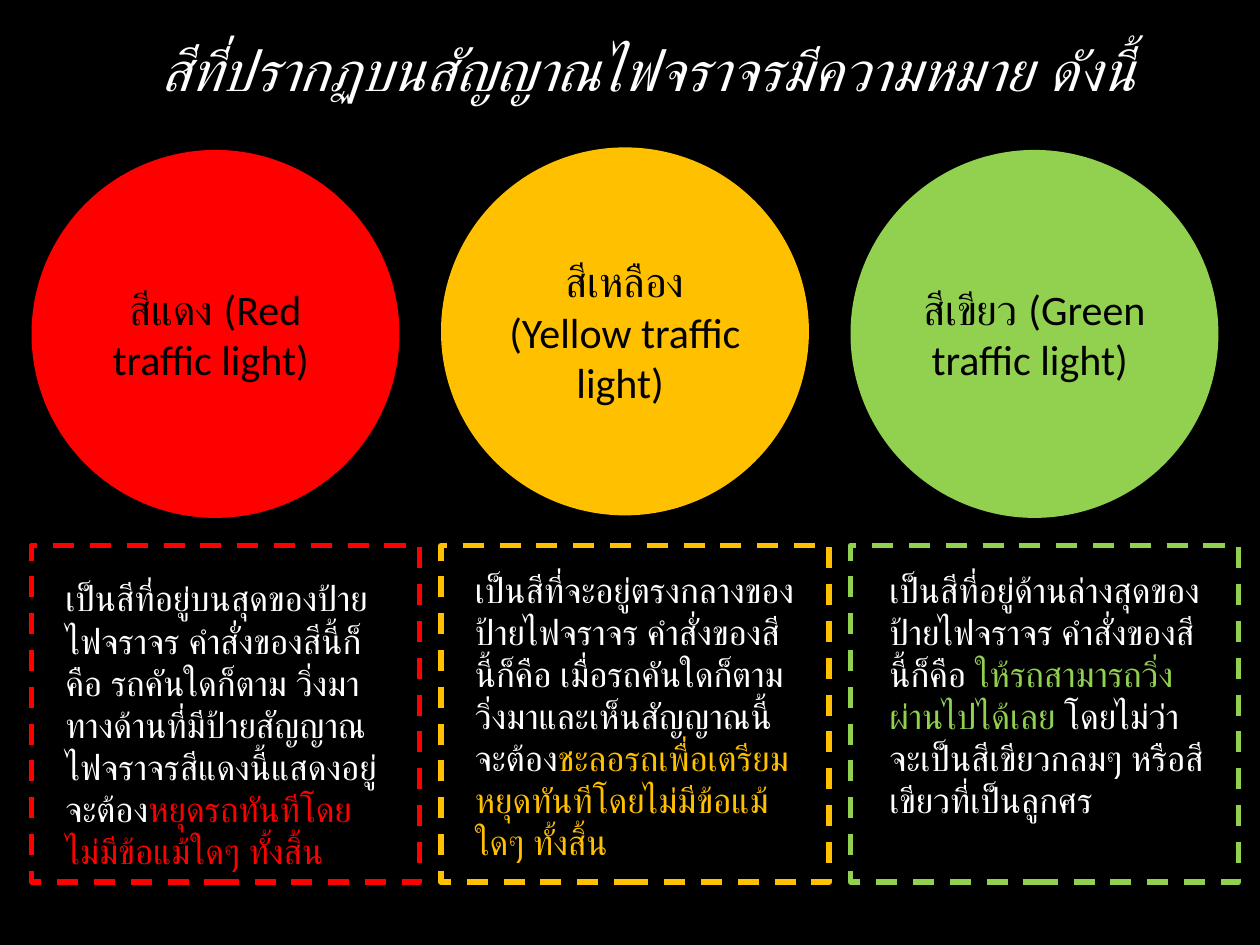
from dataclasses import dataclass

from pptx import Presentation
from pptx.dml.color import RGBColor
from pptx.enum.dml import MSO_LINE
from pptx.enum.shapes import MSO_SHAPE
from pptx.enum.text import MSO_ANCHOR, MSO_AUTO_SIZE, PP_ALIGN
from pptx.util import Inches, Pt

DASH = MSO_LINE.DASH
ELLIPSE, RECTANGLE = MSO_SHAPE.OVAL, MSO_SHAPE.RECTANGLE
TOP, MIDDLE = MSO_ANCHOR.TOP, MSO_ANCHOR.MIDDLE
NO_AUTOFIT = MSO_AUTO_SIZE.NONE
LEFT, CENTER = PP_ALIGN.LEFT, PP_ALIGN.CENTER
TITLE_ONLY = 5


@dataclass(frozen=True)
class Theme:
    """Colours, font and type sizes of the slide."""

    font: str = "Calibri"
    background: str = "000000"
    light: str = "FFFFFF"
    dark: str = "000000"
    red: str = "FF0000"
    yellow: str = "FFC000"
    green: str = "92D050"
    title_size: int = 32
    label_size: int = 24
    body_size: int = 20
    frame_width: int = 3


@dataclass(frozen=True)
class Box:
    """A rectangle in inches."""

    left: float
    top: float
    width: float
    height: float

    def inside(self, left, top, width, height):
        """Return a box placed relative to this one's corner."""
        return Box(self.left + left, self.top + top, width, height)

    def lengths(self):
        """Return the four lengths for python-pptx."""
        return [Inches(n) for n in (self.left, self.top, self.width, self.height)]


@dataclass(frozen=True)
class Light:
    """One traffic light: its colour, wording and small offsets."""

    color: str
    label: str
    spans: tuple
    circle_top: float
    text_left: float
    text_top: float
    text_width: float


THEME = Theme()
PAGE = Box(0, 0, 10, 7.5)
TITLE_BOX = PAGE.inside(0.8, 0.23, 8.68, 0.64)
FIRST_COLUMN = PAGE.inside(0.25, 1.17, 3.08, 5.83)
COLUMN_STEP = 3.25
CIRCLE_SIZE = 2.92
FRAME_TOP, FRAME_HEIGHT = 3.16, 2.67
TEXT_HEIGHT = 2.15

TITLE = "สีที่ปรากฏบนสัญญาณไฟจราจรมีความหมาย ดังนี้"
LIGHTS = (
    Light(
        THEME.red,
        "สีแดง (Red traffic light) ",
        (
            ("เป็นสีที่อยู่บนสุดของป้ายไฟจราจร คำสั่งของสีนี้ก็คือ รถคันใดก็ตาม "
             "วิ่งมาทางด้านที่มีป้ายสัญญาณไฟจราจรสีแดงนี้แสดงอยู่ จะต้อง", THEME.light),
            ("หยุดรถทันทีโดยไม่มีข้อแม้ใดๆ ทั้งสิ้น", THEME.red),
        ),
        0.02, 0.17, 0.2, 2.75,
    ),
    Light(
        THEME.yellow,
        "สีเหลือง (Yellow traffic light) ",
        (
            ("เป็นสีที่จะอยู่ตรงกลางของป้ายไฟจราจร คำสั่งของสีนี้ก็คือ "
             "เมื่อรถคันใดก็ตามวิ่งมาและเห็นสัญญาณนี้จะต้อง", THEME.light),
            ("ชะลอรถเพื่อเตรียมหยุดทันทีโดยไม่มีข้อแม้ใดๆ ทั้งสิ้น", THEME.yellow),
        ),
        0, 0.17, 0.13, 2.75,
    ),
    Light(
        THEME.green,
        "สีเขียว (Green traffic light) ",
        (
            ("เป็นสีที่อยู่ด้านล่างสุดของป้ายไฟจราจร คำสั่งของสีนี้ก็คือ ", THEME.light),
            ("ให้รถสามารถวิ่งผ่านไปได้เลย ", THEME.green),
            ("โดยไม่ว่าจะเป็นสีเขียวกลมๆ หรือสีเขียวที่เป็นลูกศร", THEME.light),
        ),
        0.02, 0.21, 0.13, 2.71,
    ),
)


def write_spans(frame, spans, size, align, anchor, italic=None):
    """Fill a text frame with one paragraph of coloured spans."""
    frame.word_wrap = True
    frame.auto_size = NO_AUTOFIT
    frame.vertical_anchor = anchor
    para = frame.paragraphs[0]
    para.alignment = align
    for text, color in spans:
        span = para.add_run()
        span.text = text
        span.font.name = THEME.font
        span.font.size = Pt(size)
        span.font.italic = italic
        span.font.color.rgb = RGBColor.from_string(color)


def place_title(page, box):
    """Move the title placeholder into its box and write the title."""
    title = page.shapes.title
    title.left, title.top, title.width, title.height = box.lengths()
    write_spans(title.text_frame, [(TITLE, THEME.light)],
                THEME.title_size, CENTER, TOP, italic=True)


def add_circle(page, box, light):
    """Draw the filled lamp with its name."""
    circle = page.shapes.add_shape(ELLIPSE, *box.lengths())
    circle.shadow.inherit = False
    circle.fill.solid()
    circle.fill.fore_color.rgb = RGBColor.from_string(light.color)
    circle.line.fill.background()
    write_spans(circle.text_frame, [(light.label, THEME.dark)],
                THEME.label_size, CENTER, MIDDLE)


def add_frame(page, box, color):
    """Draw the dashed frame around a description."""
    frame = page.shapes.add_shape(RECTANGLE, *box.lengths())
    frame.shadow.inherit = False
    frame.fill.background()
    frame.line.color.rgb = RGBColor.from_string(color)
    frame.line.width = Pt(THEME.frame_width)
    frame.line.dash_style = DASH


def add_light_column(page, box, light):
    """Place a lamp above its framed description."""
    add_circle(page, box.inside(0, light.circle_top, CIRCLE_SIZE, CIRCLE_SIZE), light)
    frame_box = box.inside(0, FRAME_TOP, box.width, FRAME_HEIGHT)
    text_box = frame_box.inside(light.text_left, light.text_top,
                                light.text_width, TEXT_HEIGHT)
    description = page.shapes.add_textbox(*text_box.lengths())
    write_spans(description.text_frame, light.spans, THEME.body_size, LEFT, TOP)
    add_frame(page, frame_box, light.color)


def main():
    """Build the traffic light slide and save it."""
    deck = Presentation()
    deck.slide_width, deck.slide_height = Inches(PAGE.width), Inches(PAGE.height)
    page = deck.slides.add_slide(deck.slide_layouts[TITLE_ONLY])
    page.background.fill.solid()
    page.background.fill.fore_color.rgb = RGBColor.from_string(THEME.background)
    place_title(page, TITLE_BOX)
    for index, light in enumerate(LIGHTS):
        column = FIRST_COLUMN.inside(index * COLUMN_STEP, 0,
                                     FIRST_COLUMN.width, FIRST_COLUMN.height)
        add_light_column(page, column, light)
    deck.save("out.pptx")


if __name__ == "__main__":
    main()
